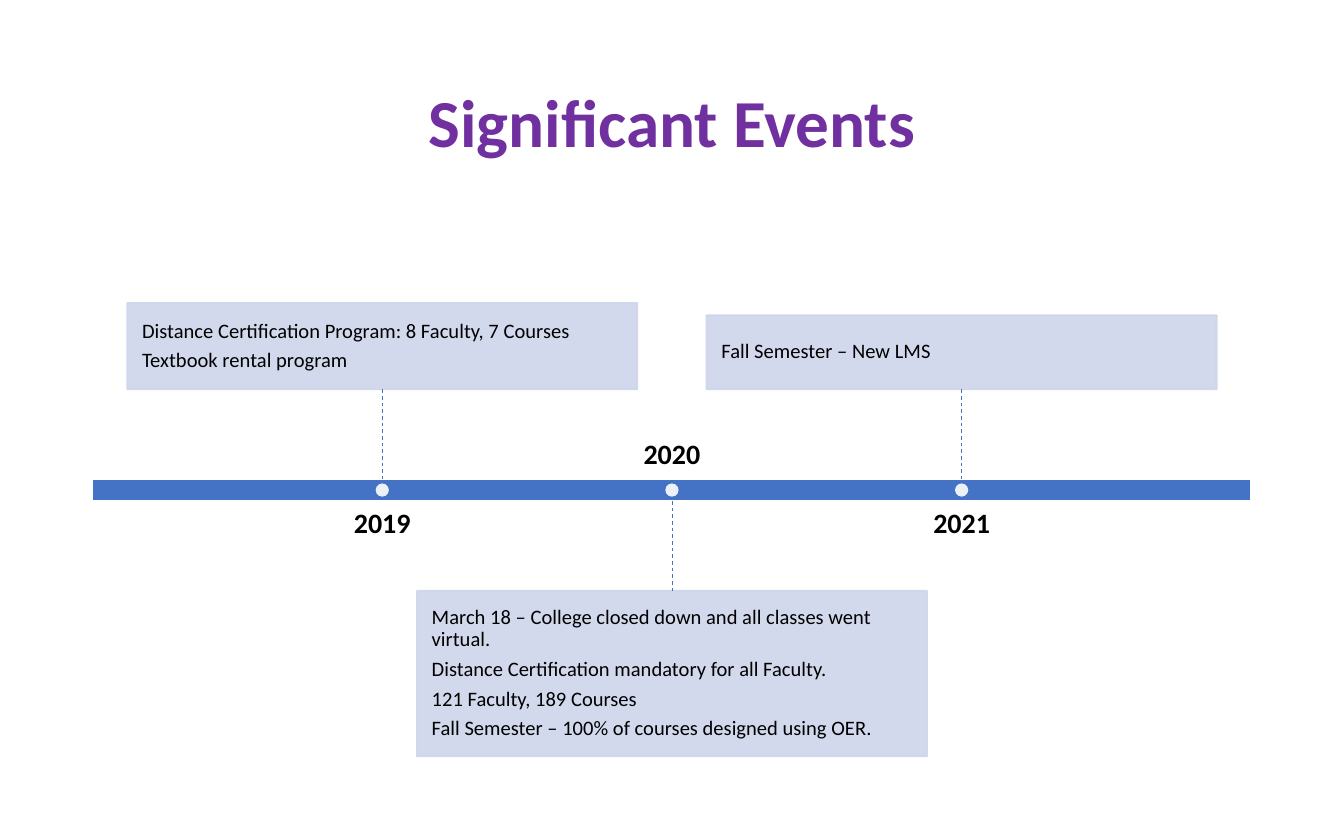
from lxml.etree import SubElement
from pptx import Presentation
from pptx.dml.color import RGBColor
from pptx.enum.dml import MSO_LINE
from pptx.enum.shapes import MSO_CONNECTOR, MSO_SHAPE
from pptx.enum.text import MSO_ANCHOR as Anchor, PP_ALIGN as Align
from pptx.oxml.ns import qn
from pptx.util import Cm, Pt

COLORS = {"title": "7030A0", "bar": "4472C4", "box": "CFD5EA",
          "white": "FFFFFF", "text": "000000"}

# Lengths in centimetres
SLIDE_WIDTH, SLIDE_HEIGHT = 25.4, 15.88
BAR_LEFT, BAR_TOP, BAR_WIDTH, BAR_HEIGHT = 1.75, 9.06, 21.9, 0.41
BAR_BOTTOM = BAR_TOP + BAR_HEIGHT
BOX_WIDTH, BOX_GAP = 9.64, 1.7
LABEL_WIDTH, LABEL_HEIGHT, LABEL_GAP = 8.76, 1.14, 0.16
DOT_SIZE = 0.25

# Year, box height, box above the bar, lines of text
EVENTS = [
    ("2019", 1.63, True, ["Distance Certification Program: 8 Faculty, 7 Courses",
                          "Textbook rental program"]),
    ("2020", 3.13, False, ["March 18 – College closed down and all classes went virtual.",
                           "Distance Certification mandatory for all Faculty.",
                           "121 Faculty, 189 Courses",
                           "Fall Semester – 100% of courses designed using OER."]),
    ("2021", 1.4, True, ["Fall Semester – New LMS"]),
]


def color(name):
    return RGBColor.from_string(COLORS[name])


def set_opacity(fill_parent, percent):
    """Add an alpha value to the solid fill inside an XML element."""
    rgb = fill_parent.find(qn("a:solidFill")).find(qn("a:srgbClr"))
    SubElement(rgb, qn("a:alpha"), val=str(percent * 1000))


def write_text(shape, lines, size, anchor, align, margin=0.0, bold=False,
               name="text", space_after=0):
    frame = shape.text_frame
    frame_format = {"word_wrap": True, "vertical_anchor": anchor}
    for side in ("left", "right", "top", "bottom"):
        frame_format[f"margin_{side}"] = Cm(margin)
    for key, value in frame_format.items():
        setattr(frame, key, value)
    for index, line in enumerate(lines):
        paragraph = frame.add_paragraph() if index else frame.paragraphs[0]
        paragraph.text = line
        for key, value in {"alignment": align, "line_spacing": 0.9,
                           "space_after": Pt(space_after)}.items():
            setattr(paragraph, key, value)
        for key, value in {"name": "Calibri", "size": Pt(size), "bold": bold}.items():
            setattr(paragraph.font, key, value)
        paragraph.font.color.rgb = color(name)


def add_filled(slide, kind, left, top, width, height, fill, line=None, opacity=100):
    shape = slide.shapes.add_shape(kind, Cm(left), Cm(top), Cm(width), Cm(height))
    shape.shadow.inherit = False
    shape.fill.solid()
    shape.fill.fore_color.rgb = color(fill)
    if line:
        shape.line.color.rgb = color(line)
        shape.line.width = Pt(1)
    else:
        shape.line.fill.background()
    if opacity < 100:
        properties = shape._element.spPr
        set_opacity(properties, opacity)
        if line:
            set_opacity(properties.find(qn("a:ln")), opacity)
    return shape


def add_label(slide, text, left, top, width, height, size, anchor, name="text"):
    label = slide.shapes.add_textbox(Cm(left), Cm(top), Cm(width), Cm(height))
    write_text(label, [text], size, anchor, Align.CENTER, bold=True, name=name)


def add_dashed_line(slide, x, top, bottom):
    connector = slide.shapes.add_connector(
        MSO_CONNECTOR.STRAIGHT, Cm(x), Cm(top), Cm(x), Cm(bottom))
    connector.line.color.rgb = color("bar")
    connector.line.width = Pt(0.5)
    connector.line.dash_style = MSO_LINE.DASH
    SubElement(connector._element.spPr, qn("a:effectLst"))


def add_event(slide, center, year, box_height, above, lines):
    # The year stands on the other side of the bar from its box
    if above:
        box_top = BAR_TOP - BOX_GAP - box_height
        line_ends = (BAR_TOP - BOX_GAP, BAR_TOP)
        label_top, anchor = BAR_BOTTOM + LABEL_GAP, Anchor.TOP
    else:
        box_top = BAR_BOTTOM + BOX_GAP
        line_ends = (BAR_BOTTOM, box_top)
        label_top, anchor = BAR_TOP - LABEL_GAP - LABEL_HEIGHT, Anchor.BOTTOM

    add_label(slide, year, center - LABEL_WIDTH / 2, label_top,
              LABEL_WIDTH, LABEL_HEIGHT, 15, anchor)
    box = add_filled(slide, MSO_SHAPE.RECTANGLE, center - BOX_WIDTH / 2, box_top,
                     BOX_WIDTH, box_height, "box", line="box", opacity=90)
    write_text(box, lines, 11, Anchor.MIDDLE, Align.LEFT, margin=0.28, space_after=4)
    add_dashed_line(slide, center, *line_ends)
    add_filled(slide, MSO_SHAPE.OVAL, center - DOT_SIZE / 2,
               BAR_TOP + (BAR_HEIGHT - DOT_SIZE) / 2, DOT_SIZE, DOT_SIZE,
               "white", opacity=90)


def main():
    presentation = Presentation()
    presentation.slide_width = Cm(SLIDE_WIDTH)
    presentation.slide_height = Cm(SLIDE_HEIGHT)
    slide = presentation.slides.add_slide(presentation.slide_layouts[6])

    # Title
    add_label(slide, "Significant Events", BAR_LEFT, 0.84, BAR_WIDTH, 3.07,
              36, Anchor.MIDDLE, name="title")

    # Timeline bar
    add_filled(slide, MSO_SHAPE.RECTANGLE, BAR_LEFT, BAR_TOP, BAR_WIDTH, BAR_HEIGHT,
               "bar", line="white")

    # Events, evenly spread along the bar
    step = BAR_WIDTH / (len(EVENTS) + 1)
    for number, event in enumerate(EVENTS, start=1):
        add_event(slide, BAR_LEFT + number * step, *event)

    presentation.save("out.pptx")


if __name__ == "__main__":
    main()
